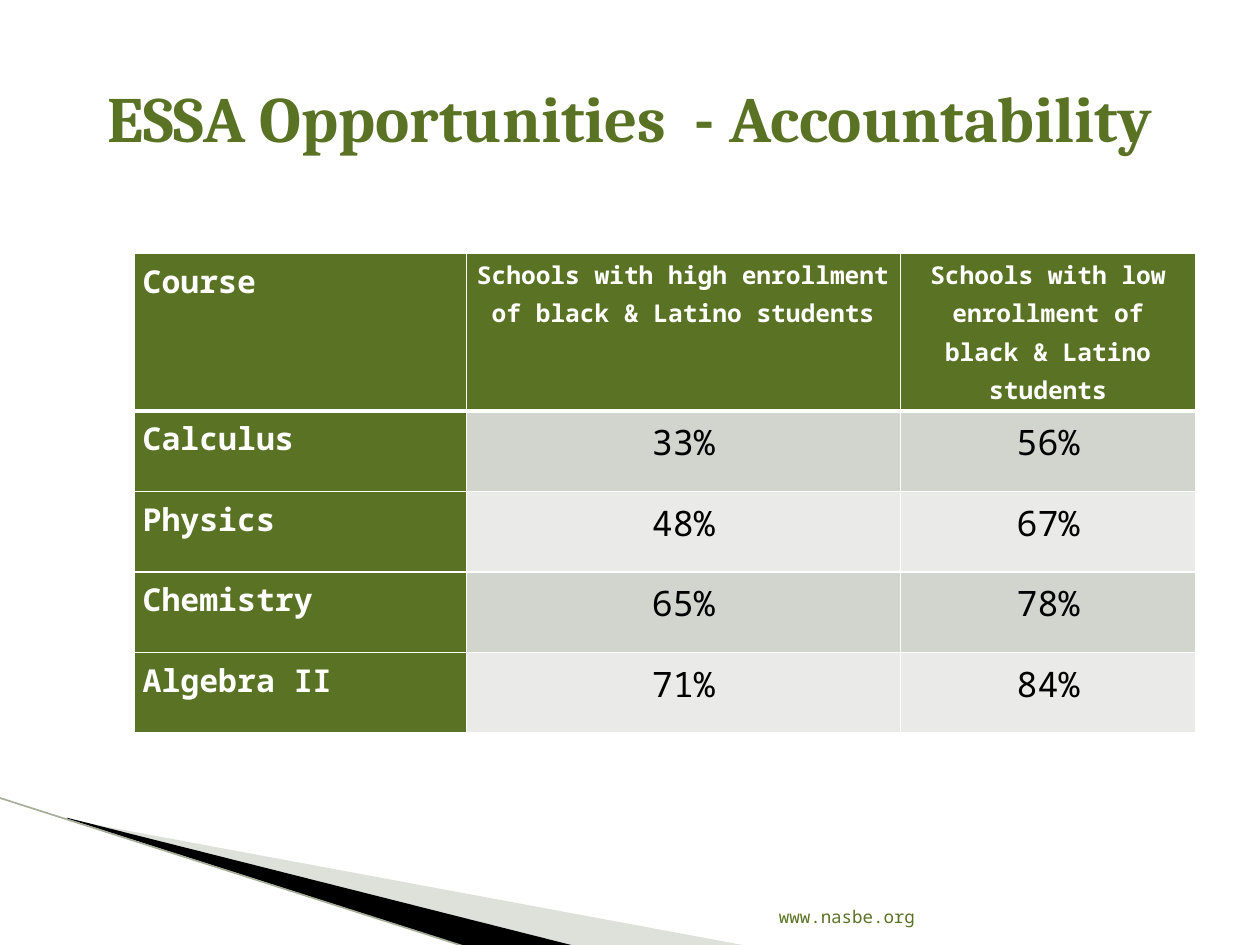
import pptx
import pptx.dml.color
import pptx.enum.shapes
import pptx.enum.text
import pptx.oxml
import pptx.oxml.ns
import pptx.util
from dataclasses import dataclass

Pt = pptx.util.Pt
ALIGN = pptx.enum.text.PP_ALIGN
ANCHOR = pptx.enum.text.MSO_ANCHOR

# Content
TITLE = "ESSA Opportunities  - Accountability"
FOOTER = "www.nasbe.org"
ROWS = [
    ("Course", "Schools with high enrollment of black & Latino students",
     "Schools with low enrollment of black & Latino students"),
    ("Calculus", "33%", "56%"),
    ("Physics", "48%", "67%"),
    ("Chemistry", "65%", "78%"),
    ("Algebra II", "71%", "84%"),
]

# Layout, in points
SLIDE_SIZE = (720, 540)
TITLE_BOX = (36, 21.6, 648, 90)
FOOTER_BOX = (344.9, 504.7, 185, 28.8)
TABLE_ORIGIN = (76.5, 144.8)
COLUMN_WIDTHS = (190, 248, 169)
HEADER_HEIGHT, ROW_HEIGHT = 90, 46
PALE_WEDGE = [(39.6, 468.5), (428.4, 540.7), (328.3, 540.7), (39.6, 468)]
BLACK_WEDGE = [(38.2, 467.3), (329, 540.7), (267.8, 541.4), (38.9, 468)]
EDGE_LINE = (-0.7, 455.8, 267.1, 541.4)


@dataclass(frozen=True)
class Theme:
    green: str = "597224"
    white: str = "FFFFFF"
    black: str = "000000"
    bands: tuple = ("D1D5CD", "EAEBE8")
    wedge: str = "ADB6A2"
    edge: str = "A4AE98"
    title_font: str = "Cambria"
    body_font: str = "Noto Sans Mono"
    title_size: float = 36.9
    label_size: float = 18
    header_size: float = 14
    value_size: float = 20
    footer_size: float = 10


THEME = Theme()


def rgb(value):
    return pptx.dml.color.RGBColor.from_string(value)


def points(values):
    return [Pt(value) for value in values]


def write_text(frame, text, *, size, color, font=THEME.body_font, bold=False,
               align=ALIGN.LEFT, spacing=None):
    frame.word_wrap = True
    paragraph = frame.paragraphs[0]
    paragraph.alignment = align
    if spacing:
        paragraph.line_spacing = spacing
    run = paragraph.add_run()
    run.text = text
    run.font.name = font
    run.font.size = Pt(size)
    run.font.bold = bold
    run.font.color.rgb = rgb(color)


def add_wedge(slide, corners, color, opacity=None):
    start, *others = [points(corner) for corner in corners]
    builder = slide.shapes.build_freeform(*start)
    builder.add_line_segments(others, close=True)
    shape = builder.convert_to_shape()
    shape.shadow.inherit = False
    shape.line.fill.background()
    shape.fill.solid()
    shape.fill.fore_color.rgb = rgb(color)
    if opacity is not None:
        color_element = shape.fill._xPr.find(".//" + pptx.oxml.ns.qn("a:srgbClr"))
        alpha = color_element.makeelement(pptx.oxml.ns.qn("a:alpha"),
                                          {"val": str(opacity * 1000)})
        color_element.append(alpha)


def add_edge_line(slide):
    connector = slide.shapes.add_connector(
        pptx.enum.shapes.MSO_CONNECTOR.STRAIGHT, *points(EDGE_LINE))
    connector.line.color.rgb = rgb(THEME.edge)
    connector.line.width = Pt(0.95)
    properties = connector._element.spPr
    properties.append(properties.makeelement(pptx.oxml.ns.qn("a:effectLst"), {}))


def set_borders(cell, top, bottom):
    properties = cell._tc.get_or_add_tcPr()
    widths = (("lnL", 1), ("lnR", 1), ("lnT", top), ("lnB", bottom))
    for position, (tag, width) in enumerate(widths):
        properties.insert(position, pptx.oxml.parse_xml(
            f'<a:{tag} {pptx.oxml.ns.nsdecls("a")} w="{Pt(width)}"><a:solidFill>'
            f'<a:srgbClr val="{THEME.white}"/></a:solidFill></a:{tag}>'))


def add_course_table(slide):
    size = (sum(COLUMN_WIDTHS), HEADER_HEIGHT + ROW_HEIGHT * (len(ROWS) - 1))
    table = slide.shapes.add_table(len(ROWS), len(COLUMN_WIDTHS),
                                   *points(TABLE_ORIGIN + size)).table
    table.first_col = True
    for column, width in zip(table.columns, COLUMN_WIDTHS):
        column.width = Pt(width)
    for row_index, texts in enumerate(ROWS):
        is_header = row_index == 0
        table.rows[row_index].height = Pt(HEADER_HEIGHT if is_header else ROW_HEIGHT)
        for column_index, text in enumerate(texts):
            is_label = column_index == 0
            strong = is_header or is_label
            cell = table.cell(row_index, column_index)
            cell.margin_left = cell.margin_right = Pt(5)
            cell.margin_top = cell.margin_bottom = 0
            cell.fill.solid()
            cell.fill.fore_color.rgb = rgb(
                THEME.green if strong else THEME.bands[(row_index - 1) % 2])
            set_borders(cell, top=3 if row_index == 1 else 1,
                        bottom=3 if is_header else 1)
            text_size = (THEME.label_size if is_label else
                         THEME.header_size if is_header else THEME.value_size)
            write_text(cell.text_frame, text, size=text_size, bold=strong,
                       color=THEME.white if strong else THEME.black,
                       align=ALIGN.LEFT if is_label else ALIGN.CENTER, spacing=1.15)


def main():
    presentation = pptx.Presentation()
    presentation.slide_width, presentation.slide_height = points(SLIDE_SIZE)
    slide = presentation.slides.add_slide(presentation.slide_layouts[5])

    # Corner decoration
    add_wedge(slide, PALE_WEDGE, THEME.wedge, opacity=40)
    add_wedge(slide, BLACK_WEDGE, THEME.black)
    add_edge_line(slide)

    # Table
    add_course_table(slide)

    # Title
    title = slide.shapes.title
    title.left, title.top, title.width, title.height = points(TITLE_BOX)
    title.text_frame.vertical_anchor = ANCHOR.MIDDLE
    title.text_frame.auto_size = pptx.enum.text.MSO_AUTO_SIZE.NONE
    write_text(title.text_frame, TITLE, size=THEME.title_size, color=THEME.green,
               font=THEME.title_font, bold=True, align=ALIGN.CENTER)

    # Footer
    footer = slide.shapes.add_textbox(*points(FOOTER_BOX))
    footer.text_frame.vertical_anchor = ANCHOR.BOTTOM
    write_text(footer.text_frame, FOOTER, size=THEME.footer_size,
               color=THEME.green, align=ALIGN.RIGHT)

    presentation.save("out.pptx")


if __name__ == "__main__":
    main()
